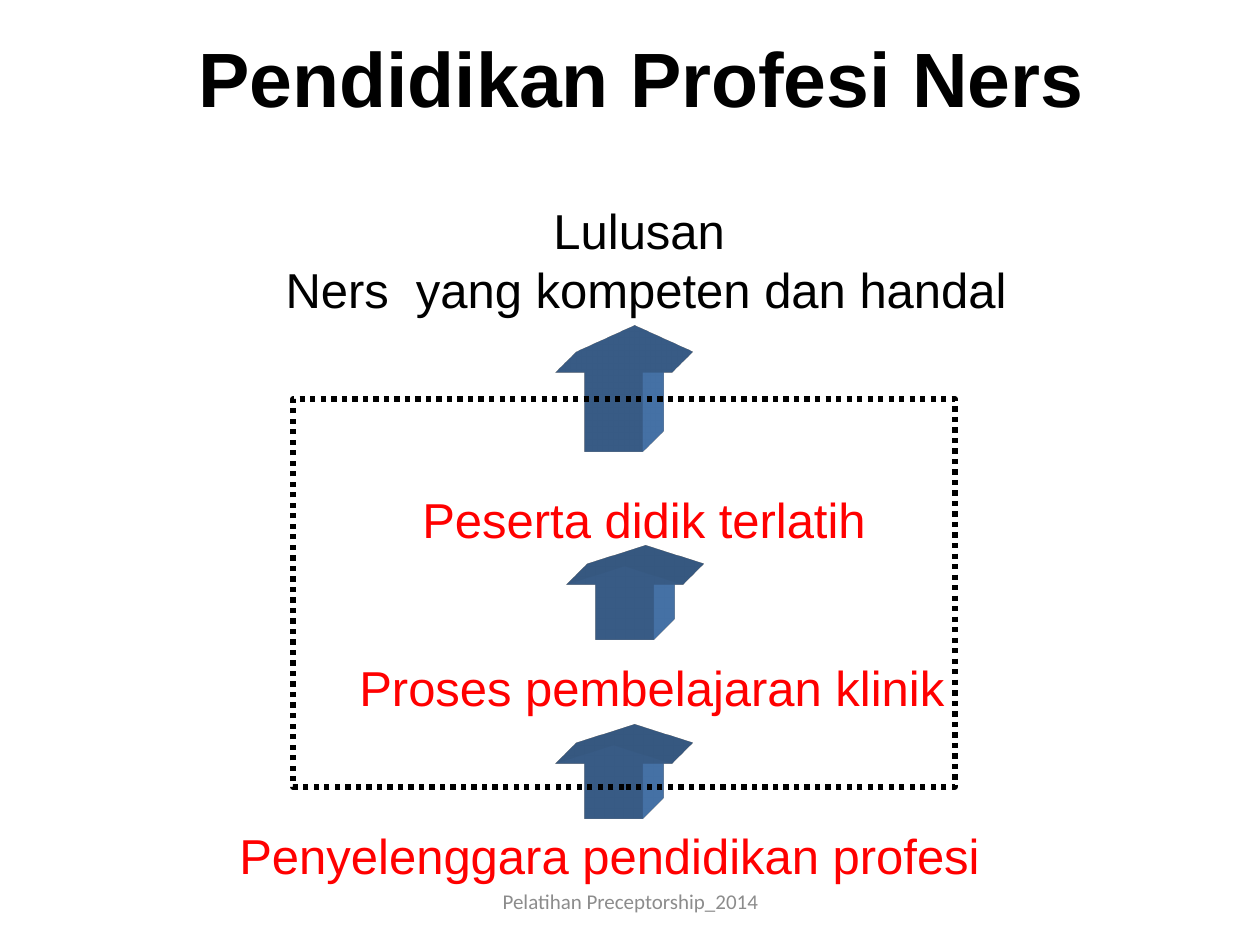
from lxml import etree
from pptx import Presentation
from pptx import util as u
from pptx.dml.color import RGBColor
from pptx.enum import dml, shapes, text
from pptx.oxml import ns

PX = 914400 // 126
THEME = {
    "black": "000000", "red": "FF0000", "grey": "8C8C8C", "blue": "4F81BD",
    "font": "Arial", "footer_font": "Calibri",
    "title": 44, "body": 28, "footer": 12,
}

# Content: boxes are left, top, width, height in px
TITLE = ("Pendidikan Profesi Ners", (186, 24, 920, 106))
GRADUATES = (["Lulusan ", "Ners  yang kompeten dan handal"], (186, 194, 920, 131))
STAGES = [
    ("Peserta didik terlatih", (410, 483, 474, 72)),
    ("Proses pembelajaran klinik", (347, 651, 617, 72)),
    ("Penyelenggara pendidikan profesi", (227, 819, 774, 72)),
]
FOOTER = ("Pelatihan Preceptorship_2014", (431, 876, 399, 50))
ARROW_WIDTH = 116
ARROWS = [(556, 346, 106), (567, 567, 73), (556, 746, 73)]  # left, top, height
FRAME = (293, 399, 662, 388)


def emu(box):
    return [length * PX for length in box]


def colour(name):
    return RGBColor.from_string(THEME[name])


def write(shape, lines, size, color, font="font", bold=False, align=None,
          anchor=text.MSO_ANCHOR.TOP, wrap=False):
    frame = shape.text_frame
    frame.text = "\n".join(lines)
    frame.word_wrap = wrap
    frame.auto_size = text.MSO_AUTO_SIZE.NONE
    frame.vertical_anchor = anchor
    for para in frame.paragraphs:
        para.alignment = align or text.PP_ALIGN.LEFT
        for span in para.runs:
            span.font.name = THEME[font]
            span.font.size = u.Pt(THEME[size])
            span.font.bold = bold
            span.font.color.rgb = colour(color)


def extrude(shape):
    """Give the shape depth towards the upper right."""
    properties = shape._element.spPr
    scene = etree.SubElement(properties, ns.qn("a:scene3d"))
    etree.SubElement(scene, ns.qn("a:camera"), prst="legacyObliqueTopRight")
    etree.SubElement(scene, ns.qn("a:lightRig"), rig="legacyFlat3", dir="b")
    solid = etree.SubElement(properties, ns.qn("a:sp3d"),
                             extrusionH="430200", prstMaterial="legacyMatte")
    depth = etree.SubElement(solid, ns.qn("a:extrusionClr"))
    etree.SubElement(depth, ns.qn("a:srgbClr"), val=THEME["blue"])


deck = Presentation()
deck.slide_width, deck.slide_height = u.Inches(10), u.Inches(7.5)
page = deck.slides.add_slide(deck.slide_layouts[5])

# Title
heading, box = TITLE
title = page.shapes.title
title.left, title.top, title.width, title.height = emu(box)
write(title, [heading], "title", "black", bold=True)

# Outcome and stages
lines, box = GRADUATES
write(page.shapes.add_textbox(*emu(box)), lines, "body", "black",
      align=text.PP_ALIGN.CENTER, wrap=True)
for label, box in STAGES:
    write(page.shapes.add_textbox(*emu(box)), [label], "body", "red")

# Upward arrows
for left, top, height in ARROWS:
    arrow = page.shapes.add_shape(shapes.MSO_SHAPE.UP_ARROW,
                                  *emu((left, top, ARROW_WIDTH, height)))
    arrow.adjustments[0], arrow.adjustments[1] = 0.5, 0.25
    arrow.shadow.inherit = False
    arrow.fill.solid()
    arrow.fill.fore_color.rgb = colour("blue")
    arrow.line.fill.background()
    extrude(arrow)

# Dotted frame
frame_box = page.shapes.add_shape(shapes.MSO_SHAPE.RECTANGLE, *emu(FRAME))
frame_box.shadow.inherit = False
frame_box.fill.background()
frame_box.line.color.rgb = colour("black")
frame_box.line.width = u.Pt(3)
frame_box.line.dash_style = dml.MSO_LINE.ROUND_DOT

# Footer
note, box = FOOTER
write(page.shapes.add_textbox(*emu(box)), [note], "footer", "grey",
      font="footer_font", align=text.PP_ALIGN.CENTER,
      anchor=text.MSO_ANCHOR.MIDDLE, wrap=True)

deck.save("out.pptx")
